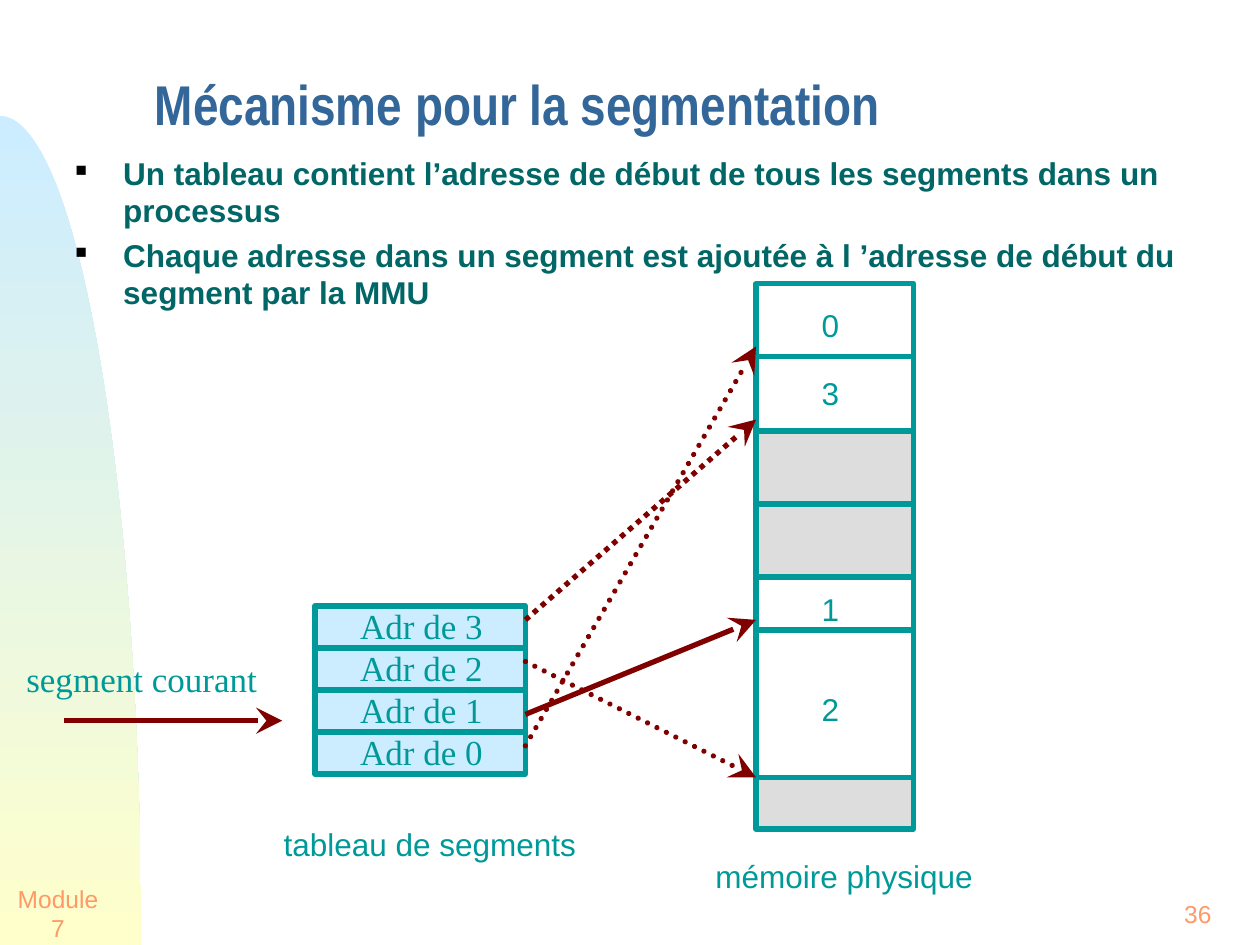
import math

import pptx
import pptx.dml.color
import pptx.enum.dml
import pptx.enum.shapes
import pptx.enum.text
import pptx.oxml.ns
import pptx.util
from lxml import etree
from pptx.util import Inches

RGBColor = pptx.dml.color.RGBColor
TEAL = RGBColor(0x00, 0x99, 0x99)
DARK_TEAL = RGBColor(0x00, 0x66, 0x66)
BLUE = RGBColor(0x33, 0x66, 0x99)
ORANGE = RGBColor(0xFF, 0x99, 0x66)
MAROON = RGBColor(0x80, 0x00, 0x00)
PALE_BLUE = RGBColor(0xCC, 0xEC, 0xFF)
PALE_YELLOW = RGBColor(0xFF, 0xFF, 0xCC)
WHITE = RGBColor(0xFF, 0xFF, 0xFF)
GREY = RGBColor(0xDD, 0xDD, 0xDD)

ALIGN = pptx.enum.text.PP_ALIGN
ANCHOR = pptx.enum.text.MSO_ANCHOR
MEMORY_LEFT, MEMORY_RIGHT = 6, 7.25
TABLE_LEFT, TABLE_RIGHT, TABLE_TOP = 2.5, 4.17, 4.81
ROW_HEIGHT = 1 / 3


def add_child(parent, tag, **attributes):
    """Append a DrawingML element to a parent element."""
    return etree.SubElement(parent, pptx.oxml.ns.qn(tag), **attributes)


def add_text(shapes, box, lines, size, color, font="Arial", align=ALIGN.LEFT,
             anchor=ANCHOR.TOP, wrap=True, bold=False):
    """Add a text box with one paragraph per line and return its paragraphs."""
    frame = shapes.add_textbox(*map(Inches, box)).text_frame
    frame.word_wrap = wrap
    frame.vertical_anchor = anchor
    frame.text = "\n".join(lines)
    for paragraph in frame.paragraphs:
        paragraph.alignment = align
        paragraph.font.name = font
        paragraph.font.size = pptx.util.Pt(size)
        paragraph.font.bold = bold
        paragraph.font.color.rgb = color
    return frame.paragraphs


def add_centred_label(shapes, box, text, size=18, color=TEAL):
    """Add an unwrapped label centred in its box."""
    add_text(shapes, box, [text], size, color, align=ALIGN.CENTER,
             anchor=ANCHOR.MIDDLE, wrap=False)


def add_block(shapes, box, color):
    """Add a teal-edged rectangle."""
    block = shapes.add_shape(pptx.enum.shapes.MSO_SHAPE.RECTANGLE, *map(Inches, box))
    block.shadow.inherit = False
    block.fill.solid()
    block.fill.fore_color.rgb = color
    block.line.color.rgb = TEAL
    block.line.width = pptx.util.Pt(3)


def add_line(shapes, start, end, color):
    """Add a straight line without shadow and return it."""
    connector = shapes.add_connector(pptx.enum.shapes.MSO_CONNECTOR.STRAIGHT,
                                     *map(Inches, (*start, *end)))
    connector.line.color.rgb = color
    connector.line.width = pptx.util.Pt(3)
    add_child(connector._element.spPr, "a:effectLst")
    return connector


def add_arrow(shapes, start, end, dotted=False, round_cap=False):
    """Add a maroon arrow with a large stealth head."""
    line = add_line(shapes, start, end, MAROON).line
    if dotted:
        line.dash_style = pptx.enum.dml.MSO_LINE.ROUND_DOT
    outline = line._get_or_add_ln()
    if round_cap:
        outline.set("cap", "rnd")
    add_child(outline, "a:tailEnd", type="stealth", w="lg", len="lg")


def add_side_curve(shapes):
    """Add the quarter ellipse with a gradient at the left edge."""
    width, top, bottom, steps = 1.12, 0.92, 7.5, 60
    angles = [math.pi / 2 * step / steps for step in range(steps + 1)]
    points = [(Inches(width * math.sin(angle)),
               Inches(bottom - (bottom - top) * math.cos(angle))) for angle in angles]
    builder = shapes.build_freeform(*points[0], scale=1.0)
    builder.add_line_segments(points[1:] + [(0, Inches(bottom))], close=True)
    curve = builder.convert_to_shape()
    curve.shadow.inherit = False
    curve.line.fill.background()
    curve.fill.gradient()
    curve.fill.gradient_angle = 270
    for stop, color, position in zip(curve.fill.gradient_stops, (PALE_BLUE, PALE_YELLOW), (0, 1)):
        stop.color.rgb = color
        stop.position = position


def add_bullets(shapes, lines):
    """Add the square-bulleted statements."""
    for paragraph in add_text(shapes, (0.5, 1.17, 9.5, 0.58), lines, 18, DARK_TEAL, bold=True):
        paragraph.space_before = pptx.util.Pt(3.6)
        properties = paragraph._p.get_or_add_pPr()
        properties.set("marL", str(Inches(0.38)))
        properties.set("indent", str(Inches(-0.38)))
        bullet_color = etree.Element(pptx.oxml.ns.qn("a:buClr"))
        add_child(bullet_color, "a:srgbClr", val="010000")
        bullet_size = etree.Element(pptx.oxml.ns.qn("a:buSzPct"), val="50000")
        bullet = etree.Element(pptx.oxml.ns.qn("a:buChar"), char="■")
        font_properties = properties.find(pptx.oxml.ns.qn("a:defRPr"))
        for element in (bullet_color, bullet_size, bullet):
            font_properties.addprevious(element)


def add_memory(slide):
    """Add the physical memory with its segments and caption."""
    memory = slide.shapes.add_group_shape().shapes
    width = MEMORY_RIGHT - MEMORY_LEFT
    for top, bottom, color in ((2.25, 3.42, WHITE), (3.42, 4.58, GREY),
                               (4.58, 6.17, WHITE), (6.17, 6.58, GREY)):
        add_block(memory, (MEMORY_LEFT, top, width, bottom - top), color)
    for border in (2.83, 4, 5):
        add_line(memory, (MEMORY_LEFT, border), (MEMORY_RIGHT, border), TEAL)
    for number, top in (("0", 2.38), ("3", 2.92), ("1", 4.63), ("2", 5.43)):
        add_centred_label(memory, (6.42, top, 0.34, 0.4), number)
    add_centred_label(memory, (5.58, 6.75, 2.24, 0.4), "mémoire physique")


def add_segment_table(slide):
    """Add the stacked segment addresses."""
    table = slide.shapes.add_group_shape().shapes
    for row, segment in enumerate((3, 2, 1, 0)):
        top = TABLE_TOP + row * ROW_HEIGHT
        add_block(table, (TABLE_LEFT, top, TABLE_RIGHT - TABLE_LEFT, ROW_HEIGHT), PALE_BLUE)
        add_text(table, (2.6, top - 0.06, 1.33, 0.43), [f"Adr de {segment}"], 20, TEAL,
                 font="Times New Roman", align=ALIGN.RIGHT)


def main():
    """Build and save the segmentation slide."""
    presentation = pptx.Presentation()
    presentation.slide_width, presentation.slide_height = Inches(10), Inches(7.5)
    slide = presentation.slides.add_slide(presentation.slide_layouts[6])
    shapes = slide.shapes

    add_side_curve(shapes)
    add_centred_label(shapes, (0, 7, 0.92, 0.5), "Module 7", 14, ORANGE)
    add_text(shapes, (9.3, 7, 0.7, 0.5), ["36"], 14, ORANGE, anchor=ANCHOR.MIDDLE, wrap=False)
    title = add_text(shapes, (1.13, 0.36, 8.62, 1.05), ["Mécanisme pour la segmentation"],
                     32, BLUE, font="Arial Narrow", anchor=ANCHOR.MIDDLE, bold=True)
    title[0].line_spacing = 0.7
    add_bullets(shapes, (
        "Un tableau contient l’adresse de début de tous les segments dans un processus",
        "Chaque adresse dans un segment est ajoutée à l ’adresse de début du segment par la MMU",
    ))
    add_text(shapes, (1.75, 6.5, 2.92, 0.4), ["tableau de segments"], 18, TEAL, align=ALIGN.RIGHT)
    add_memory(slide)
    add_segment_table(slide)

    for start, end, dotted, round_cap in ((4.92, 3.33, True, False), (5.67, 4.92, False, False),
                                          (5.25, 6.17, True, True), (5.92, 2.75, True, True)):
        add_arrow(shapes, (TABLE_RIGHT, start), (MEMORY_LEFT, end), dotted, round_cap)
    add_arrow(shapes, (0.51, 5.72), (2.24, 5.72))
    add_text(shapes, (0, 5.17, 2.25, 0.43), ["segment courant"], 20, TEAL,
             font="Times New Roman", align=ALIGN.CENTER)
    presentation.save("out.pptx")


if __name__ == "__main__":
    main()
